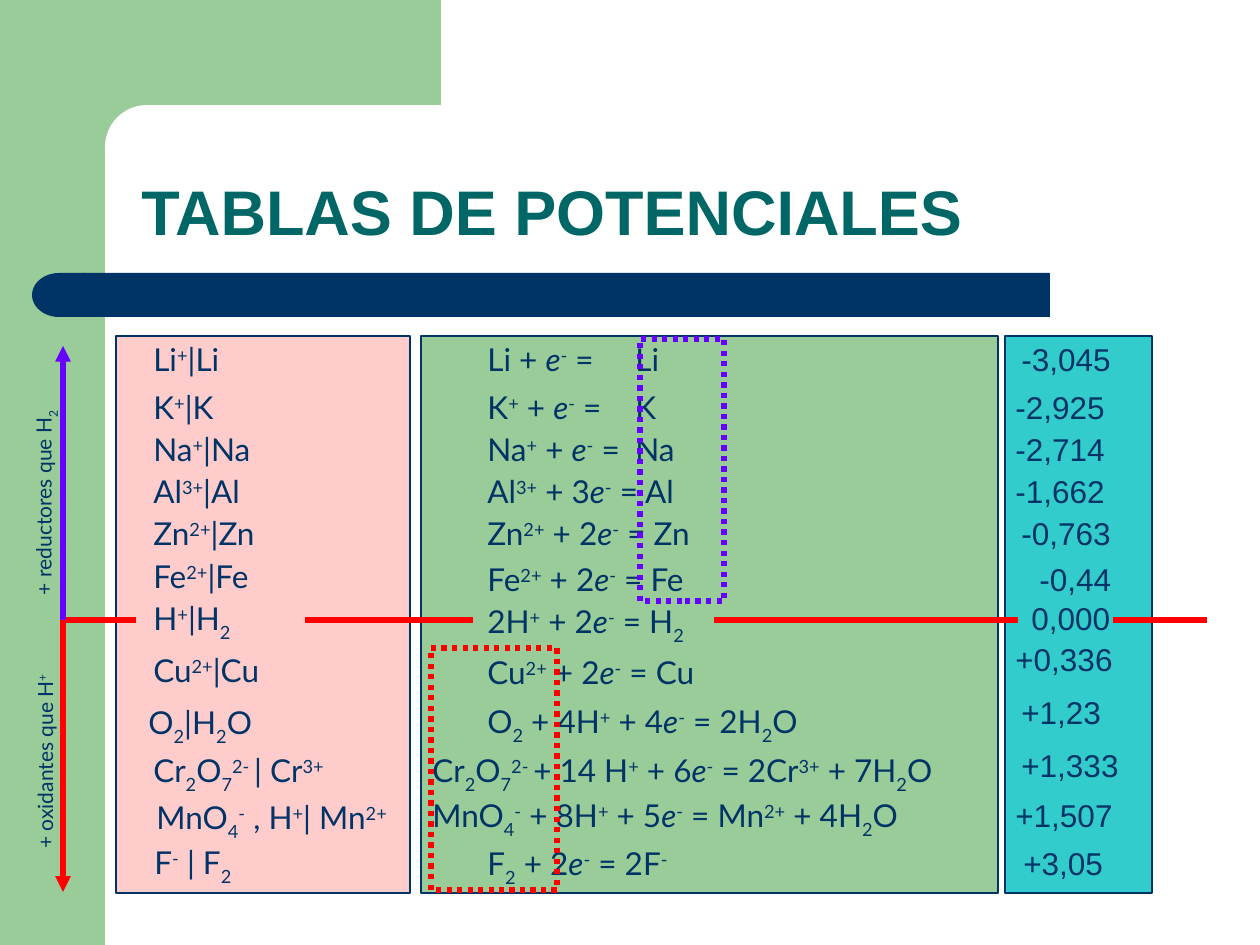
"""Build the slide with the table of standard reduction potentials."""
from lxml.etree import SubElement
from pptx import Presentation
from pptx.dml.color import RGBColor
from pptx.enum.dml import MSO_LINE
from pptx.enum.shapes import MSO_CONNECTOR, MSO_SHAPE
from pptx.enum.text import MSO_ANCHOR
from pptx.oxml.ns import qn
from pptx.util import Pt

EMU_PER_PX = 914400 / 126
COLORS = {
    "green": "99CC99", "white": "FFFFFF", "navy": "003366", "teal": "006666",
    "cyan": "33CCCC", "pink": "FFCCCC", "red": "FF0000", "violet": "6600FF",
}
BASELINES = {"^": 30000, "_": -30000}
PRODUCT_TAB = 148
VALUE_CENTER = 1079
ROW_HEIGHT = 72
ZERO_LINE = 620

PAIRS = [
    (141, 340, 240, "Li^+^|Li"),
    (141, 388, 240, "K^+^|K"),
    (141, 430, 240, "Na^+^|Na"),
    (141, 472, 240, "Al^3+^|Al"),
    (141, 514, 240, "Zn^2+^|Zn"),
    (141, 557, 240, "Fe^2+^|Fe"),
    (141, 599, 240, "H^+^|H_2_"),
    (141, 651, 240, "Cu^2+^|Cu"),
    (136, 703, 240, "O_2_|H_2_O"),
    (141, 751, 240, "Cr_2_O_7_^2- ^| Cr^3+^"),
    (144, 798, 273, "MnO_4_^-^ , H^+^| Mn^2+^"),
    (142, 843, 240, "F^-^ | F_2_"),
]
EQUATIONS = [
    (475, 340, 460, "Li + *e*^-^ =\tLi"),
    (475, 388, 460, "K^+^ + *e*^-^ =\tK"),
    (475, 430, 460, "Na^+^ + *e*^-^ =\tNa"),
    (475, 472, 460, "Al^3+^ + 3*e*^-^ = Al"),
    (475, 514, 460, "Zn^2+^ + 2*e*^-^ = Zn"),
    (475, 560, 460, "Fe^2+^ + 2*e*^-^ = Fe"),
    (475, 602, 460, "2H^+^ + 2*e*^-^ = H_2_"),
    (475, 653, 460, "Cu^2+^ + 2*e*^-^ = Cu"),
    (475, 702, 460, "O_2_ + 4H^+^ + 4*e*^-^ = 2H_2_O"),
    (420, 751, 598, "Cr_2_O_7_^2- ^+ 14 H^+^ + 6*e*^-^ = 2Cr^3+^ + 7H_2_O"),
    (420, 796, 536, "MnO_4_^-^ + 8H^+^ + 5*e*^-^ = Mn^2+^ + 4H_2_O"),
    (475, 844, 460, "F_2_ + 2*e*^-^ = 2F^-^"),
]
POTENTIALS = [
    (340, 140, "-3,045"), (388, 152, "-2,925"), (430, 152, "-2,714"),
    (472, 152, "-1,662"), (514, 140, "-0,763"), (560, 104, "-0,44"),
    (599, 120, "0,000"), (640, 152, "+0,336"), (693, 140, "+1,23"),
    (746, 140, "+1,333"), (796, 152, "+1,507"), (844, 136, "+3,05"),
]


def px(length):
    return round(length * EMU_PER_PX)


def color(name):
    return RGBColor.from_string(COLORS[name])


def split_markup(text):
    """Split text into (words, mark) pieces at the toggles ^, _ and *."""
    pieces, words, mark = [], "", ""
    for char in text:
        if char in "^_*":
            if words:
                pieces.append((words, mark))
            words, mark = "", "" if mark == char else char
        else:
            words += char
    return pieces + [(words, mark)] if words else pieces


class SlideBuilder:
    def __init__(self, page):
        self.page = page

    def shape(self, kind, left, top, width, height, fill=None, line=None, weight=0.75, dash=None):
        shape = self.page.shapes.add_shape(kind, px(left), px(top), px(width), px(height))
        shape.shadow.inherit = False
        if fill:
            shape.fill.solid()
            shape.fill.fore_color.rgb = color(fill)
        else:
            shape.fill.background()
        if line:
            shape.line.color.rgb = color(line)
            shape.line.width = Pt(weight)
            if dash:
                shape.line.dash_style = dash
        else:
            shape.line.fill.background()
        return shape

    def line(self, start, end, name, arrow=False):
        line = self.page.shapes.add_connector(
            MSO_CONNECTOR.STRAIGHT, *map(px, start), *map(px, end))
        line.line.color.rgb = color(name)
        line.line.width = Pt(3)
        if arrow:
            SubElement(line.line._get_or_add_ln(), qn("a:tailEnd"), type="triangle")
        SubElement(line._element.spPr, qn("a:effectLst"))

    def text(self, left, top, width, height, words, size=18, font="Lato", name="navy", bold=False):
        box = self.page.shapes.add_textbox(px(left), px(top), px(width), px(height))
        box.text_frame.word_wrap = True
        para = box.text_frame.paragraphs[0]
        if "\t" in words:
            tabs = SubElement(para._p.get_or_add_pPr(), qn("a:tabLst"))
            SubElement(tabs, qn("a:tab"), pos=str(px(PRODUCT_TAB)), algn="l")
        for piece, mark in split_markup(words):
            span = para.add_run()
            span.text = piece
            span.font.size = Pt(size)
            span.font.name = font
            span.font.bold = bold
            span.font.color.rgb = color(name)
            if mark == "*":
                span.font.italic = True
            elif mark:
                span.font._element.set("baseline", str(BASELINES[mark]))
        return box

    def row_text(self, left, top, width, words, font="Lato"):
        box = self.text(left, top, width, ROW_HEIGHT, words, font=font)
        box.text_frame.margin_top = 0

    def side_label(self, left, top, width, words):
        self.text(left, top, width, 38, words, size=12).rotation = 270


def main():
    deck = Presentation()
    deck.slide_width, deck.slide_height = px(1260), px(945)
    builder = SlideBuilder(deck.slides.add_slide(deck.slide_layouts[6]))

    builder.shape(MSO_SHAPE.RECTANGLE, 0, 0, 105, 945, "green")
    builder.shape(MSO_SHAPE.RECTANGLE, 95, 0, 346, 147, "green")
    panel = builder.shape(MSO_SHAPE.ROUNDED_RECTANGLE, 105, 105, 703, 84, "white")
    panel.adjustments[0] = 0.5
    builder.shape(MSO_SHAPE.RECTANGLE, 84, 273, 966, 44, "navy")
    builder.shape(MSO_SHAPE.FLOWCHART_DELAY, 32, 273, 54, 44, "navy").rotation = 180
    for left, width, fill in ((1005, 147, "cyan"), (421, 577, "green"), (116, 294, "pink")):
        builder.shape(MSO_SHAPE.RECTANGLE, left, 336, width, 557, fill, "navy")

    title = builder.text(129, 136, 1071, 158, "TABLAS DE POTENCIALES", 36, "Arial", "teal", True)
    title.text_frame.vertical_anchor = MSO_ANCHOR.MIDDLE
    title.text_frame.paragraphs[0].line_spacing = 0.9

    for row in PAIRS + EQUATIONS:
        builder.row_text(*row)
    for top, width, value in POTENTIALS:
        builder.row_text(VALUE_CENTER - width // 2, top, width, value, "Arial")

    for start, end in ((63, 136), (305, 473), (714, 1018), (1113, 1207)):
        builder.line((start, ZERO_LINE), (end, ZERO_LINE), "red")
    for tip, name in ((346, "violet"), (892, "red")):
        builder.line((63, ZERO_LINE), (63, tip), name, arrow=True)

    builder.side_label(-59, 738, 208, "+ oxidantes que H^+^")
    builder.side_label(-71, 474, 229, "+ reductores que H_2_")
    for frame, name in (((640, 339, 84, 262), "violet"), ((431, 648, 126, 242), "red")):
        builder.shape(MSO_SHAPE.RECTANGLE, *frame, line=name, weight=3, dash=MSO_LINE.ROUND_DOT)

    deck.save("out.pptx")


if __name__ == "__main__":
    main()
